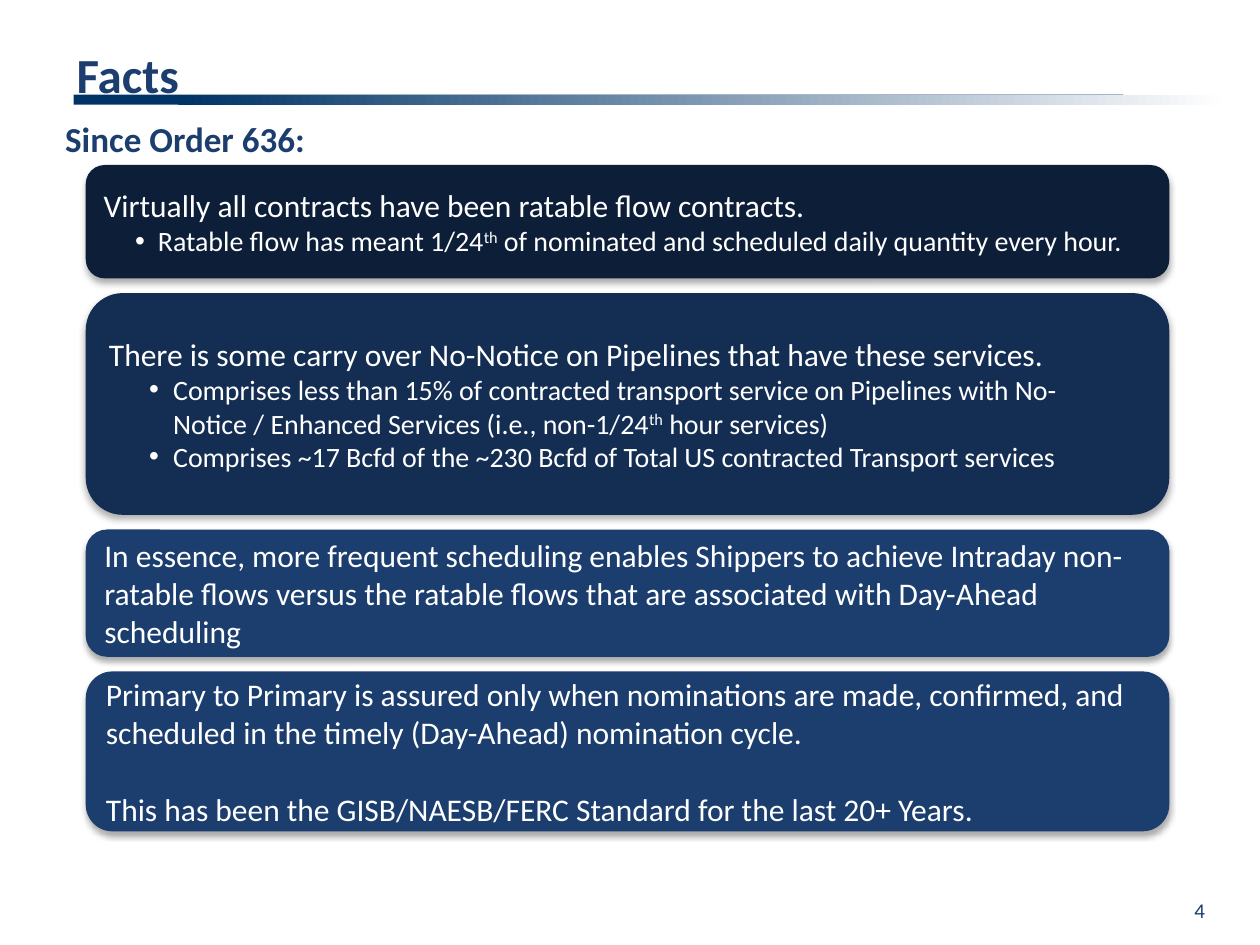
from dataclasses import dataclass

from lxml import etree
from pptx import Presentation
from pptx import util as u
from pptx.dml.color import RGBColor
from pptx.enum import shapes, text
from pptx.oxml import ns


@dataclass(frozen=True)
class Theme:
    face: str = "Calibri"
    navy: str = "1B3E6F"
    deep: str = "142E53"
    darkest: str = "0D1F38"
    rule: str = "003366"
    white: str = "FFFFFF"
    title: float = 28
    heading: float = 20
    statement: float = 18
    detail: float = 16
    number: float = 12


@dataclass(frozen=True)
class Line:
    words: str
    indent: float = 0
    hanging: float = 0
    before: float = 0


@dataclass(frozen=True)
class Fact:
    height: float
    colour: str
    lines: tuple[Line, ...]


@dataclass(frozen=True)
class Label:
    words: str
    box: tuple[float, float, float, float]
    size: float
    bold: bool = True
    align: text.PP_ALIGN = text.PP_ALIGN.LEFT
    anchor: text.MSO_ANCHOR = text.MSO_ANCHOR.MIDDLE
    wrap: bool = True


THEME = Theme()
LEFT, TOP, WIDTH, GAP = 49, 94.3, 619.2, 8.4

FACTS = (
    Fact(64.8, THEME.darkest, (
        Line("Virtually all contracts have been ratable flow contracts."),
        Line("Ratable flow has meant 1/24^th^ of nominated and scheduled daily quantity every hour.", 31, 13),
    )),
    Fact(126.7, THEME.deep, (
        Line("There is some carry over No-Notice on Pipelines that have these services."),
        Line("Comprises less than 15% of contracted transport service on Pipelines with "
             "No-Notice / Enhanced Services (i.e., non-1/24^th^ hour services)", 36.7, 13.7),
        Line("Comprises ~17 Bcfd of the ~230 Bcfd of Total US contracted Transport services", 36.7, 13.7),
    )),
    Fact(72.7, THEME.navy, (
        Line("In essence, more frequent scheduling enables Shippers to achieve Intraday non-ratable flows "
             "versus the ratable flows that are associated with Day-Ahead scheduling"),
    )),
    Fact(91.4, THEME.navy, (
        Line("Primary to Primary is assured only when nominations are made, confirmed, and scheduled "
             "in the timely (Day-Ahead) nomination cycle."),
        Line("This has been the GISB/NAESB/FERC Standard for the last 20+ Years.", before=22),
    )),
)

LABELS = (
    Label("Facts", (36.7, 25.9, 516.2, 32.4), THEME.title),
    Label("Since Order 636:", (30.2, 63.4, 158.4, 31.7), THEME.heading,
          anchor=text.MSO_ANCHOR.TOP, wrap=False),
    Label("4", (527.8, 501.1, 167.8, 37.4), THEME.number, bold=False, align=text.PP_ALIGN.RIGHT),
)


def apply(target, values: dict) -> None:
    for key, value in values.items():
        setattr(target, key, value)


def write(paragraph, words: str, size: float, colour: str, bold: bool = False) -> None:
    for index, part in enumerate(words.split("^")):
        run = paragraph.add_run()
        run.text = part
        apply(run.font, {"name": THEME.face, "size": u.Pt(size), "bold": bold})
        run.font.color.rgb = RGBColor.from_string(colour)
        if index % 2:
            run.font._element.set("baseline", "30000")


def add_bullet(paragraph, line: Line) -> None:
    properties = paragraph._p.get_or_add_pPr()
    properties.set("lvl", "1")
    properties.set("marL", str(u.Pt(line.indent)))
    properties.set("indent", str(-u.Pt(line.hanging)))
    etree.SubElement(properties, ns.qn("a:buFont"), typeface="Arial")
    etree.SubElement(properties, ns.qn("a:buChar"), char="•")


def add_shadow(shape) -> None:
    effects = shape._element.spPr.find(ns.qn("a:effectLst"))
    shadow = etree.SubElement(effects, ns.qn("a:outerShdw"), blurRad=str(u.Pt(3.5)),
                              dist=str(u.Pt(2.2)), dir="5400000", rotWithShape="0")
    black = etree.SubElement(shadow, ns.qn("a:srgbClr"), val="000000")
    etree.SubElement(black, ns.qn("a:alpha"), val="32000")


def add_panel(slide, kind, box: tuple[float, ...], colour: str):
    panel = slide.shapes.add_shape(kind, *map(u.Pt, box))
    panel.shadow.inherit = False
    panel.fill.solid()
    panel.fill.fore_color.rgb = RGBColor.from_string(colour)
    panel.line.fill.background()
    return panel


def add_rule(slide) -> None:
    kind = shapes.MSO_SHAPE.RECTANGLE
    add_panel(slide, kind, (42, 54, 600, 5.8), THEME.rule)
    fade = add_panel(slide, kind, (102, 54, 600, 5.8), THEME.rule)
    fade.fill.gradient()
    fade.fill.gradient_angle = 0
    for stop, colour in zip(fade.fill.gradient_stops, (THEME.rule, THEME.white)):
        stop.color.rgb = RGBColor.from_string(colour)


def add_label(slide, label: Label) -> None:
    frame = slide.shapes.add_textbox(*map(u.Pt, label.box)).text_frame
    apply(frame, {"word_wrap": label.wrap, "vertical_anchor": label.anchor})
    frame.paragraphs[0].alignment = label.align
    write(frame.paragraphs[0], label.words, label.size, THEME.navy, label.bold)


def add_fact(slide, fact: Fact, top: float) -> None:
    panel = add_panel(slide, shapes.MSO_SHAPE.ROUNDED_RECTANGLE,
                      (LEFT, top, WIDTH, fact.height), fact.colour)
    add_shadow(panel)
    frame = panel.text_frame
    apply(frame, {"word_wrap": True, "vertical_anchor": text.MSO_ANCHOR.MIDDLE})
    for index, line in enumerate(fact.lines):
        paragraph = frame.add_paragraph() if index else frame.paragraphs[0]
        apply(paragraph, {"alignment": text.PP_ALIGN.LEFT, "space_before": u.Pt(line.before)})
        if line.indent:
            add_bullet(paragraph, line)
        write(paragraph, line.words, THEME.detail if line.indent else THEME.statement, THEME.white)


def main() -> None:
    deck = Presentation()
    apply(deck, {"slide_width": u.Pt(720), "slide_height": u.Pt(540)})
    slide = deck.slides.add_slide(deck.slide_layouts[6])
    add_rule(slide)
    for label in LABELS:
        add_label(slide, label)
    top = TOP
    for fact in FACTS:
        add_fact(slide, fact, top)
        top += fact.height + GAP
    deck.save("out.pptx")


if __name__ == "__main__":
    main()
